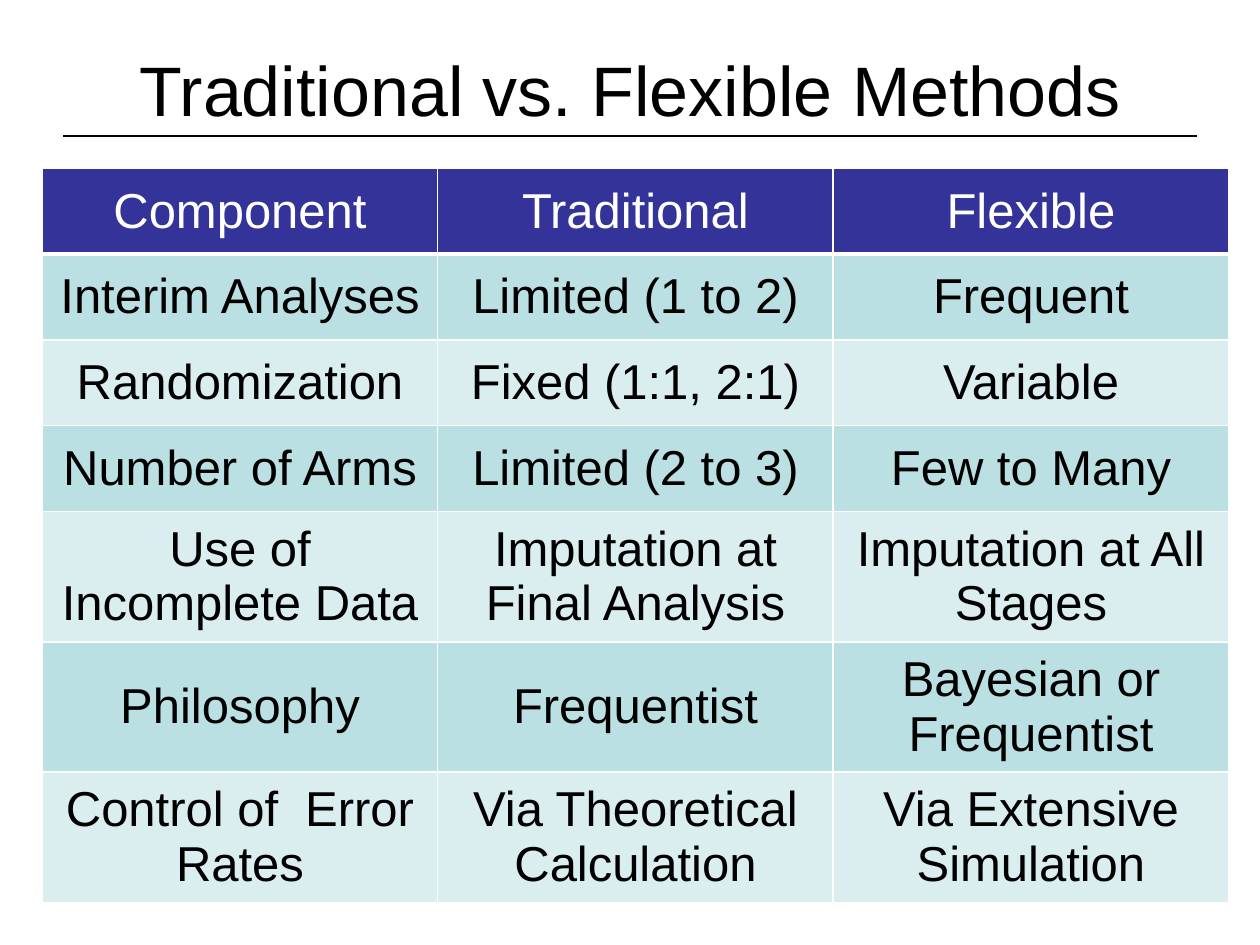
"""Build a slide with a table comparing traditional and flexible trial methods."""
from dataclasses import dataclass

import lxml.etree
import pptx
import pptx.dml.color
import pptx.enum.shapes
import pptx.enum.text
import pptx.oxml
import pptx.oxml.ns
import pptx.util

Cm = pptx.util.Cm
Pt = pptx.util.Pt


@dataclass(frozen=True)
class Theme:
    font: str = "Arial"
    title_size: int = 40
    cell_size: int = 28
    ink: str = "000000"
    paper: str = "FFFFFF"
    header: str = "333399"
    bands: tuple = ("BBE0E3", "DAEDEF")


theme = Theme()


def write(frame, text, *, size, color):
    frame.word_wrap = True
    para = frame.paragraphs[0]
    para.alignment = pptx.enum.text.PP_ALIGN.CENTER
    span = para.add_run()
    span.text = text
    span.font.name = theme.font
    span.font.size = Pt(size)
    span.font.color.rgb = pptx.dml.color.RGBColor.from_string(color)


def add_borders(cell, bottom):
    properties = cell._tc.get_or_add_tcPr()
    widths = {"a:lnL": 1, "a:lnR": 1, "a:lnT": 1, "a:lnB": bottom}
    for position, (tag, width) in enumerate(widths.items()):
        edge = pptx.oxml.parse_xml(
            f'<{tag} {pptx.oxml.ns.nsdecls("a")} w="{Pt(width)}"><a:solidFill>'
            f'<a:srgbClr val="{theme.paper}"/></a:solidFill></{tag}>'
        )
        properties.insert(position, edge)


rows = [
    ("Component", "Traditional", "Flexible"),
    ("Interim Analyses", "Limited (1 to 2)", "Frequent"),
    ("Randomization", "Fixed (1:1, 2:1)", "Variable"),
    ("Number of Arms", "Limited (2 to 3)", "Few to Many"),
    ("Use of Incomplete Data", "Imputation at Final Analysis", "Imputation at All Stages"),
    ("Philosophy", "Frequentist", "Bayesian or Frequentist"),
    ("Control of  Error Rates", "Via Theoretical Calculation", "Via Extensive Simulation"),
]

deck = pptx.Presentation()
deck.slide_width = Cm(25.4)
deck.slide_height = Cm(19.05)
page = deck.slides.add_slide(deck.slide_layouts[6])

title = page.shapes.add_textbox(Cm(1.27), Cm(0.2), Cm(22.86), Cm(3.18))
title.text_frame.vertical_anchor = pptx.enum.text.MSO_ANCHOR.MIDDLE
write(title.text_frame, "Traditional vs. Flexible Methods", size=theme.title_size, color=theme.ink)

rule = page.shapes.add_connector(
    pptx.enum.shapes.MSO_CONNECTOR.STRAIGHT, Cm(1.27), Cm(2.74), Cm(24.13), Cm(2.74)
)
rule.line.width = Pt(0.75)
rule.line.color.rgb = pptx.dml.color.RGBColor.from_string(theme.ink)
lxml.etree.SubElement(rule._element.spPr, pptx.oxml.ns.qn("a:effectLst"))

row_height = Cm(1.73)
table = page.shapes.add_table(
    len(rows), len(rows[0]), Cm(0.85), Cm(3.39), Cm(23.92), row_height * len(rows)
).table
for row_index, texts in enumerate(rows):
    is_header = row_index == 0
    fill = theme.header if is_header else theme.bands[(row_index - 1) % 2]
    table.rows[row_index].height = row_height
    for column_index, text in enumerate(texts):
        cell = table.cell(row_index, column_index)
        cell.vertical_anchor = pptx.enum.text.MSO_ANCHOR.MIDDLE
        cell.fill.solid()
        cell.fill.fore_color.rgb = pptx.dml.color.RGBColor.from_string(fill)
        add_borders(cell, bottom=3 if is_header else 1)
        write(cell.text_frame, text, size=theme.cell_size,
              color=theme.paper if is_header else theme.ink)

deck.save("out.pptx")
